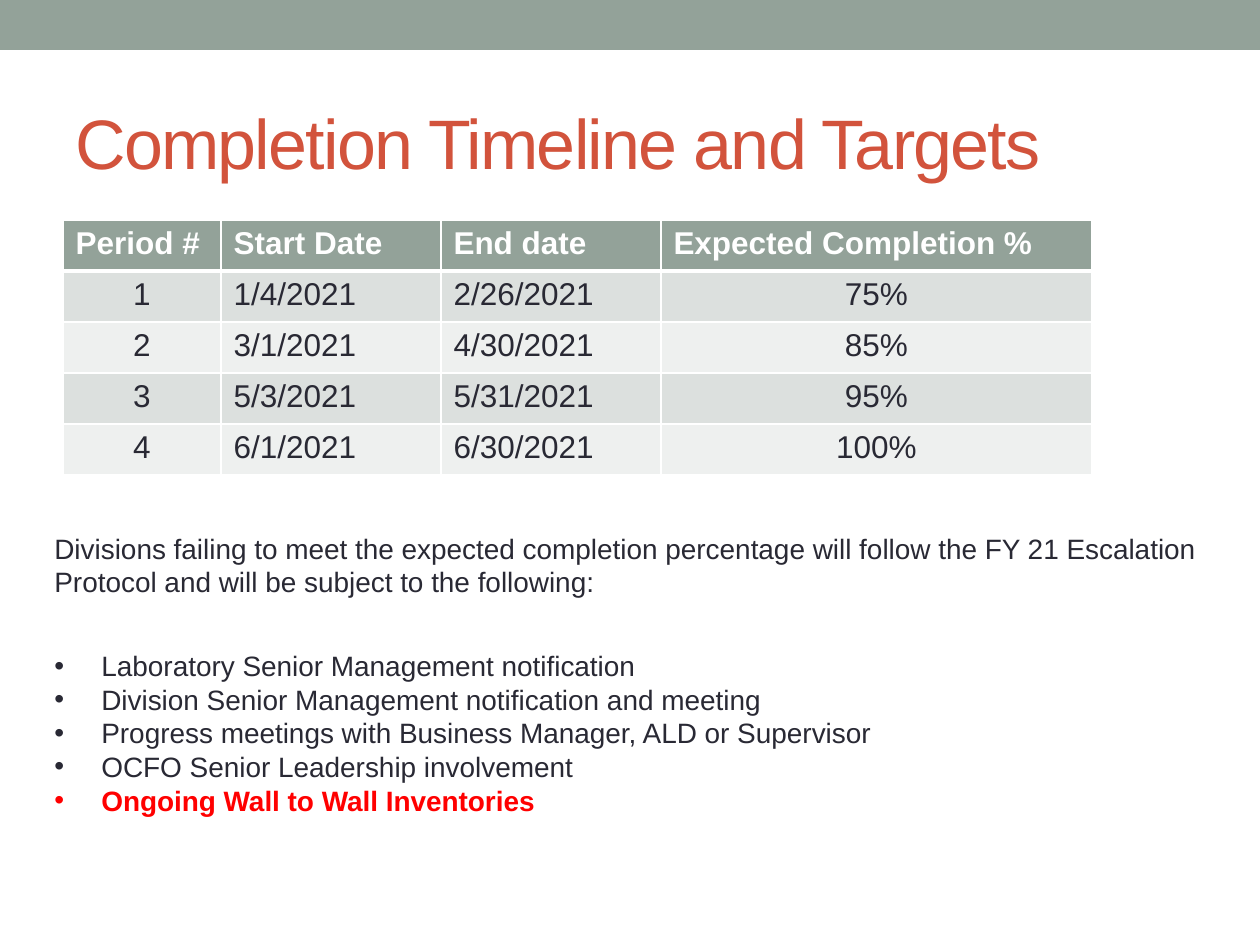
from typing import NamedTuple

from lxml.etree import SubElement
from pptx import Presentation
from pptx.dml.color import RGBColor
from pptx.enum.shapes import MSO_SHAPE
from pptx.enum.text import MSO_ANCHOR, PP_ALIGN
from pptx.oxml.ns import qn
from pptx.util import Emu, Pt

SAGE = RGBColor(0x93, 0xA2, 0x99)
RUST = RGBColor(0xD2, 0x53, 0x3C)
INK = RGBColor(0x29, 0x29, 0x34)
RED = RGBColor(0xFF, 0x00, 0x00)
WHITE = RGBColor(0xFF, 0xFF, 0xFF)
BANDS = (RGBColor(0xDC, 0xE0, 0xDE), RGBColor(0xEE, 0xF0, 0xEF))
FONT = "Arial"


class Box(NamedTuple):
    left: int
    top: int
    width: int
    height: int


class Column(NamedTuple):
    head: str
    width: int
    align: PP_ALIGN
    values: tuple[str, ...]


class Item(NamedTuple):
    text: str
    color: RGBColor = INK
    bold: bool = False


ROW = 51
COLUMNS = (
    Column("Period #", 158, PP_ALIGN.CENTER, ("1", "2", "3", "4")),
    Column("Start Date", 220, PP_ALIGN.LEFT,
           ("1/4/2021", "3/1/2021", "5/3/2021", "6/1/2021")),
    Column("End date", 220, PP_ALIGN.LEFT,
           ("2/26/2021", "4/30/2021", "5/31/2021", "6/30/2021")),
    Column("Expected Completion %", 431, PP_ALIGN.CENTER,
           ("75%", "85%", "95%", "100%")),
)
INTRO = Item("Divisions failing to meet the expected completion percentage will "
             "follow the FY 21 Escalation Protocol and will be subject to the "
             "following:")
STEPS = (
    Item("Laboratory Senior Management notification"),
    Item("Division Senior Management notification and meeting"),
    Item("Progress meetings with Business Manager, ALD or Supervisor"),
    Item("OCFO Senior Leadership involvement"),
    Item("Ongoing Wall to Wall Inventories", RED, True),
)


def px(n: int) -> Emu:
    return Emu(round(n * 914400 / 126))


def place(box: Box) -> list[Emu]:
    return [px(n) for n in box]


def write(para, item: Item, size: int) -> None:
    para.text = item.text
    font = para.font
    font.name, font.size = FONT, Pt(size)
    font.bold, font.color.rgb = item.bold, item.color


def bullet(para) -> None:
    props = para._p.get_or_add_pPr()
    props.set("marL", str(px(47)))
    props.set("indent", str(-px(47)))
    SubElement(props, qn("a:buFont"), typeface=FONT)
    SubElement(props, qn("a:buChar"), char="•")


def border(cell, row: int) -> None:
    props = cell._tc.get_or_add_tcPr()
    widths = {"L": 1, "R": 1, "T": 3 if row == 1 else 1, "B": 3 if row == 0 else 1}
    for side, width in widths.items():
        line = SubElement(props, qn(f"a:ln{side}"), w=str(Pt(width)))
        fill = SubElement(line, qn("a:solidFill"))
        SubElement(fill, qn("a:srgbClr"), val=str(WHITE))


def paint(cell, item: Item, row: int, fill: RGBColor, align: PP_ALIGN) -> None:
    border(cell, row)
    cell.fill.solid()
    cell.fill.fore_color.rgb = fill
    para = cell.text_frame.paragraphs[0]
    write(para, item, 18)
    para.alignment = align


def add_bar(slide, box: Box) -> None:
    bar = slide.shapes.add_shape(MSO_SHAPE.RECTANGLE, *place(box))
    bar.shadow.inherit = False
    bar.fill.solid()
    bar.fill.fore_color.rgb = SAGE
    bar.line.fill.background()


def add_frame(slide, box: Box):
    frame = slide.shapes.add_textbox(*place(box)).text_frame
    frame.word_wrap = True
    return frame


def add_title(slide, box: Box) -> None:
    frame = add_frame(slide, box)
    frame.vertical_anchor = MSO_ANCHOR.MIDDLE
    para = frame.paragraphs[0]
    write(para, Item("Completion Timeline and Targets", RUST), 40)
    para.runs[0].font._element.set("spc", "-100")


def add_grid(slide, left: int, top: int) -> None:
    count = len(COLUMNS[0].values) + 1
    box = Box(left, top, sum(col.width for col in COLUMNS), ROW * count)
    table = slide.shapes.add_table(count, len(COLUMNS), *place(box)).table
    for row in table.rows:
        row.height = px(ROW)
    for x, col in enumerate(COLUMNS):
        table.columns[x].width = px(col.width)
        paint(table.cell(0, x), Item(col.head, WHITE, True), 0, SAGE, PP_ALIGN.LEFT)
        for y, value in enumerate(col.values, 1):
            paint(table.cell(y, x), Item(value), y, BANDS[(y - 1) % 2], col.align)


def add_notice(slide, box: Box) -> None:
    frame = add_frame(slide, box)
    write(frame.paragraphs[0], INTRO, 16)
    frame.paragraphs[0].space_after = Pt(28.8)
    for step in STEPS:
        para = frame.add_paragraph()
        write(para, step, 16)
        bullet(para)


def main() -> None:
    deck = Presentation()
    deck.slide_width, deck.slide_height = px(1260), px(945)
    slide = deck.slides.add_slide(deck.slide_layouts[6])
    add_bar(slide, Box(0, 0, 1260, 50))
    add_title(slide, Box(63, 73, 1134, 136))
    add_grid(slide, 63, 220)
    add_notice(slide, Box(42, 525, 1187, 416))
    deck.save("out.pptx")


if __name__ == "__main__":
    main()
